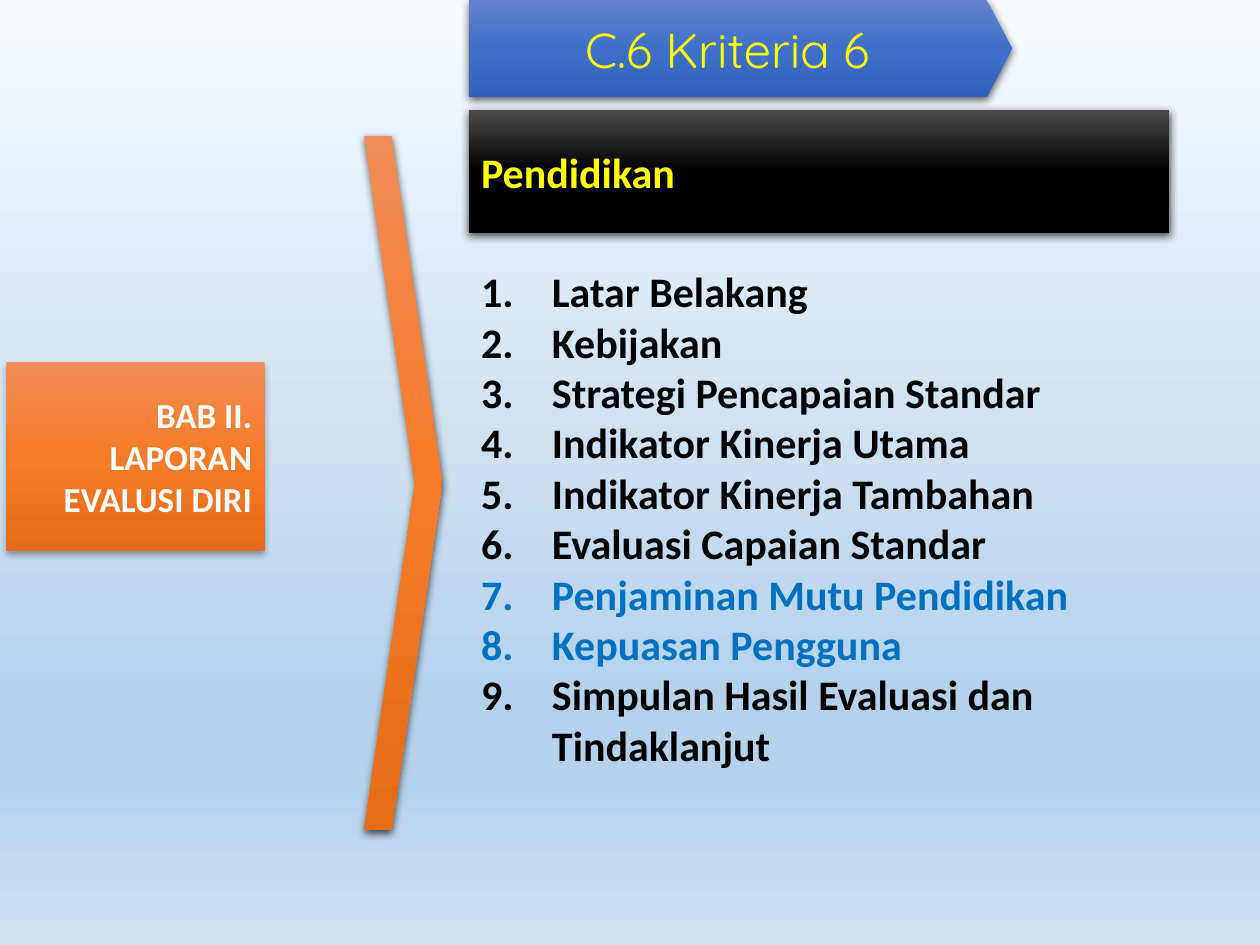
from dataclasses import dataclass
from typing import Optional

from lxml.etree import SubElement
from pptx import Presentation
from pptx.dml.color import RGBColor
from pptx.enum.shapes import MSO_SHAPE
from pptx.enum.text import MSO_ANCHOR, MSO_AUTO_SIZE, PP_ALIGN
from pptx.oxml.ns import qn
from pptx.util import Pt

COLOURS = {"yellow": "FFFF00", "black": "000000", "blue": "0070C0", "white": "FFFFFF"}
GRADIENTS = {
    "sky": {0: "F7FAFD", 74: "B5D2EC", 83: "B5D2EC", 100: "CEE1F2"},
    "black": {0: "4B4B4B", 50: "000000", 100: "000000"},
    "orange": {0: "F18C57", 50: "F67B28", 100: "E56C19"},
    "blue": {0: "6183CB", 50: "3E70CA", 100: "3062BB"},
}
COLUMN_X, COLUMN_W = 267.84, 400.32
INDENT = 40.5
TOPICS = [
    ("Latar Belakang", "black"),
    ("Kebijakan", "black"),
    ("Strategi Pencapaian Standar", "black"),
    ("Indikator Kinerja Utama", "black"),
    ("Indikator Kinerja Tambahan", "black"),
    ("Evaluasi Capaian Standar", "black"),
    ("Penjaminan Mutu Pendidikan", "blue"),
    ("Kepuasan Pengguna", "blue"),
    ("Simpulan Hasil Evaluasi dan Tindaklanjut", "black"),
]


@dataclass
class Shadow:
    """Downward shadow: opacity in percent, blur and distance in points."""
    alpha: int = 63
    blur: float = 4.5
    dist: float = 1.5


@dataclass
class Label:
    """Text of a shape with its formatting."""
    text: str
    size: int
    colour: str
    align: PP_ALIGN = PP_ALIGN.LEFT
    font: str = "Calibri"
    bold: bool = True


@dataclass
class Block:
    """Gradient shape with an optional label; lengths in points."""
    kind: MSO_SHAPE
    x: float
    y: float
    w: float
    h: float
    gradient: str
    label: Optional[Label] = None
    adj: Optional[float] = None
    shadow: Shadow = Shadow


def shade(fill, root, name: str) -> None:
    """Fill with a named gradient running from top to bottom."""
    fill.gradient()
    fill.gradient_angle = 270
    stops = next(root.iter(qn("a:gsLst")))
    for gs in list(stops):
        stops.remove(gs)
    for pos, colour in GRADIENTS[name].items():
        gs = SubElement(stops, qn("a:gs"), pos=str(pos * 1000))
        SubElement(gs, qn("a:srgbClr"), val=colour)


def cast_shadow(sp, shadow: Shadow) -> None:
    """Give the shape an outer shadow."""
    sp.shadow.inherit = False
    effects = sp._element.spPr.find(qn("a:effectLst"))
    outer = SubElement(effects, qn("a:outerShdw"), blurRad=str(Pt(shadow.blur)),
                       dist=str(Pt(shadow.dist)), dir="5400000", rotWithShape="0")
    clr = SubElement(outer, qn("a:srgbClr"), val=COLOURS["black"])
    SubElement(clr, qn("a:alpha"), val=str(shadow.alpha * 1000))


def write(p, label: Label) -> None:
    """Put a label into a paragraph."""
    p.text = label.text
    p.alignment = label.align
    p.font.name = label.font
    p.font.size = Pt(label.size)
    p.font.bold = label.bold
    p.font.color.rgb = RGBColor.from_string(COLOURS[label.colour])


def add_block(s, b: Block) -> None:
    """Draw one gradient block."""
    sp = s.shapes.add_shape(b.kind, Pt(b.x), Pt(b.y), Pt(b.w), Pt(b.h))
    if b.adj is not None:
        sp.adjustments[0] = b.adj
    shade(sp.fill, sp._element.spPr, b.gradient)
    sp.line.fill.background()
    cast_shadow(sp, b.shadow)
    if b.label:
        tf = sp.text_frame
        tf.word_wrap = True
        tf.vertical_anchor = MSO_ANCHOR.MIDDLE
        write(tf.paragraphs[0], b.label)


def add_topics(s) -> None:
    """Draw the numbered list of topics."""
    tf = s.shapes.add_textbox(Pt(COLUMN_X), Pt(148.32), Pt(COLUMN_W), Pt(298.08)).text_frame
    tf.word_wrap = True
    tf.auto_size = MSO_AUTO_SIZE.SHAPE_TO_FIT_TEXT
    for i, (text, colour) in enumerate(TOPICS):
        p = tf.add_paragraph() if i else tf.paragraphs[0]
        write(p, Label(text, 24, colour))
        pPr = p._p.get_or_add_pPr()
        pPr.set("marL", str(Pt(INDENT)))
        pPr.set("indent", str(-Pt(INDENT)))
        bullet = pPr.makeelement(qn("a:buAutoNum"), {"type": "arabicPeriod"})
        pPr.insert(0, bullet)


def main() -> None:
    """Build the slide and save it."""
    prs = Presentation()
    prs.slide_width, prs.slide_height = Pt(720), Pt(540)
    s = prs.slides.add_slide(prs.slide_layouts[6])
    shade(s.background.fill, s._element, "sky")
    blocks = [
        Block(MSO_SHAPE.RECTANGLE, COLUMN_X, 62.64, COLUMN_W, 70.56, "black",
              Label("Pendidikan", 24, "yellow"), shadow=Shadow()),
        Block(MSO_SHAPE.CHEVRON, 208.08, 77.76, 44.64, 396.72, "orange",
              adj=0.65, shadow=Shadow()),
        Block(MSO_SHAPE.PENTAGON, COLUMN_X, 0, 310.32, 55.44, "blue",
              Label("C.6 Kriteria 6 ", 28, "yellow", PP_ALIGN.CENTER, "Quicksand", False),
              adj=0.26, shadow=Shadow()),
        Block(MSO_SHAPE.RECTANGLE, 3.6, 206.64, 147.6, 108, "orange",
              Label("BAB II. LAPORAN EVALUSI DIRI", 20, "white", PP_ALIGN.RIGHT),
              shadow=Shadow(32, 3.5, 2.2)),
    ]
    for b in blocks:
        add_block(s, b)
    add_topics(s)
    prs.save("out.pptx")


if __name__ == "__main__":
    main()
